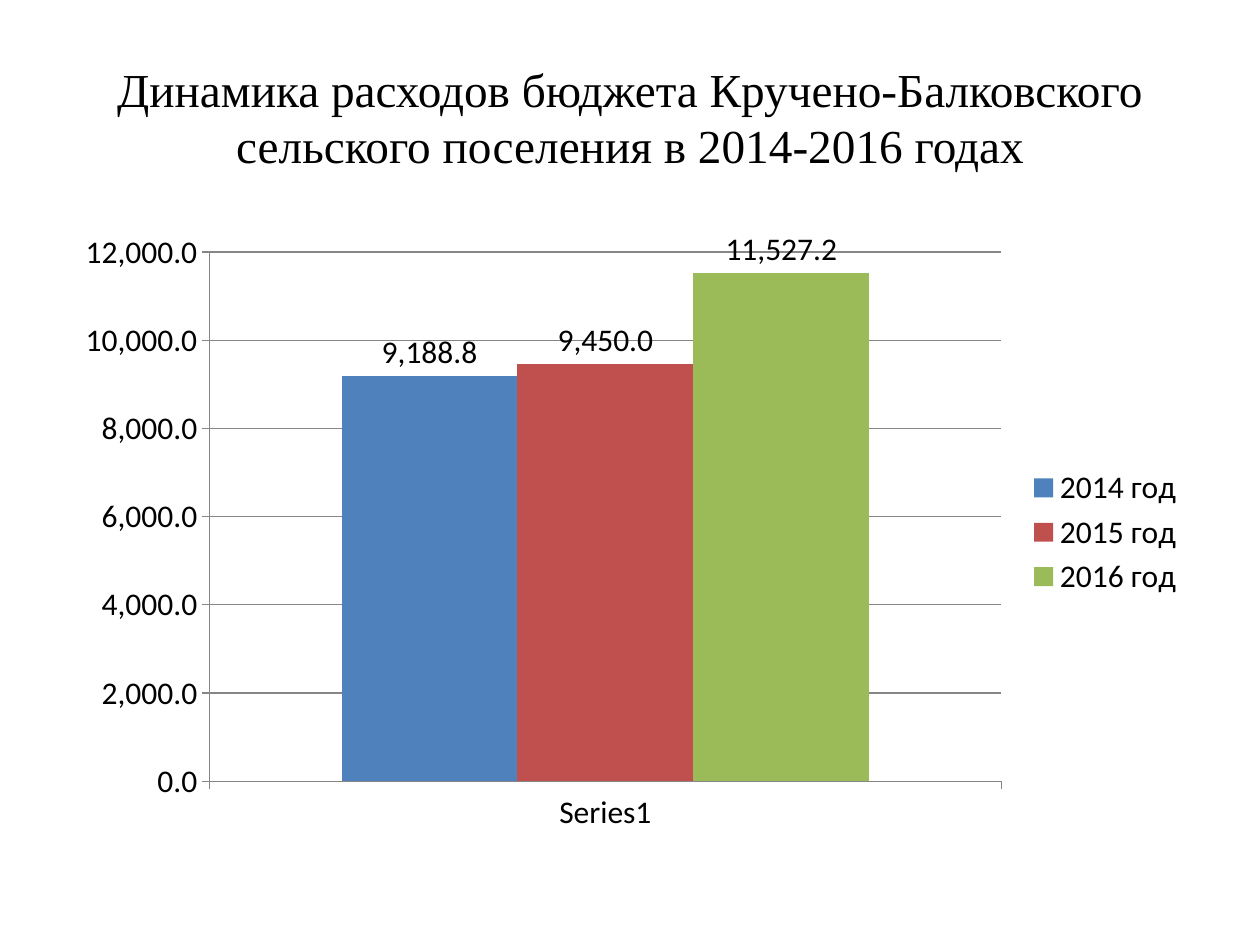
from pptx import Presentation
from pptx.chart.data import CategoryChartData
from pptx.dml.color import RGBColor
from pptx.enum.chart import XL_CHART_TYPE, XL_LABEL_POSITION, XL_LEGEND_POSITION, XL_TICK_MARK
from pptx.enum.text import MSO_ANCHOR, PP_ALIGN
from pptx.util import Inches, Pt

TITLE = "Динамика расходов бюджета Кручено-Балковского сельского поселения в 2014-2016 годах"
YEARS = [
    ("2014 год", 9188.8, "4F81BD"),
    ("2015 год", 9450, "C0504D"),
    ("2016 год", 11527.2, "9BBB59"),
]
FORMAT = "#,##0.0"
BLACK, GREY = "000000", "868686"


def color(code):
    return RGBColor.from_string(code)


def style(font, name, size):
    font.name = name
    font.size = Pt(size)
    font.color.rgb = color(BLACK)


def add_title(slide):
    box = slide.shapes.add_textbox(Inches(0.5), Inches(0.3), Inches(9), Inches(1.25))
    frame = box.text_frame
    frame.word_wrap = True
    frame.vertical_anchor = MSO_ANCHOR.MIDDLE
    frame.text = TITLE
    para = frame.paragraphs[0]
    para.alignment = PP_ALIGN.CENTER
    style(para.runs[0].font, "Times New Roman", 27)


def add_bars(slide):
    data = CategoryChartData(number_format=FORMAT)
    data.categories = ["Series1"]
    for name, value, _ in YEARS:
        data.add_series(name, [value])
    chart = slide.shapes.add_chart(
        XL_CHART_TYPE.COLUMN_CLUSTERED,
        Inches(0.5), Inches(1.75), Inches(9), Inches(4.95), data,
    ).chart
    style(chart.font, "Calibri", 18)
    chart.has_title = False
    chart.has_legend = True
    chart.legend.position = XL_LEGEND_POSITION.RIGHT
    chart.legend.include_in_layout = False

    for axis in (chart.category_axis, chart.value_axis):
        axis.major_tick_mark = XL_TICK_MARK.OUTSIDE
        axis.minor_tick_mark = XL_TICK_MARK.NONE
        axis.format.line.color.rgb = color(GREY)
    scale = chart.value_axis
    scale.minimum_scale, scale.maximum_scale, scale.major_unit = 0, 12000, 2000
    scale.has_major_gridlines = True
    scale.major_gridlines.format.line.color.rgb = color(GREY)
    scale.tick_labels.number_format = FORMAT
    scale.tick_labels.number_format_is_linked = False

    plot = chart.plots[0]
    plot.vary_by_categories = False
    plot.gap_width, plot.overlap = 150, 0
    for series, (_, _, fill) in zip(plot.series, YEARS):
        series.format.fill.solid()
        series.format.fill.fore_color.rgb = color(fill)
        labels = series.data_labels
        labels.show_value = True
        labels.number_format = FORMAT
        labels.number_format_is_linked = False
        labels.position = XL_LABEL_POSITION.OUTSIDE_END


def main():
    deck = Presentation()
    deck.slide_width, deck.slide_height = Inches(10), Inches(7.5)
    slide = deck.slides.add_slide(deck.slide_layouts[6])
    add_title(slide)
    add_bars(slide)
    deck.save("out.pptx")


if __name__ == "__main__":
    main()
